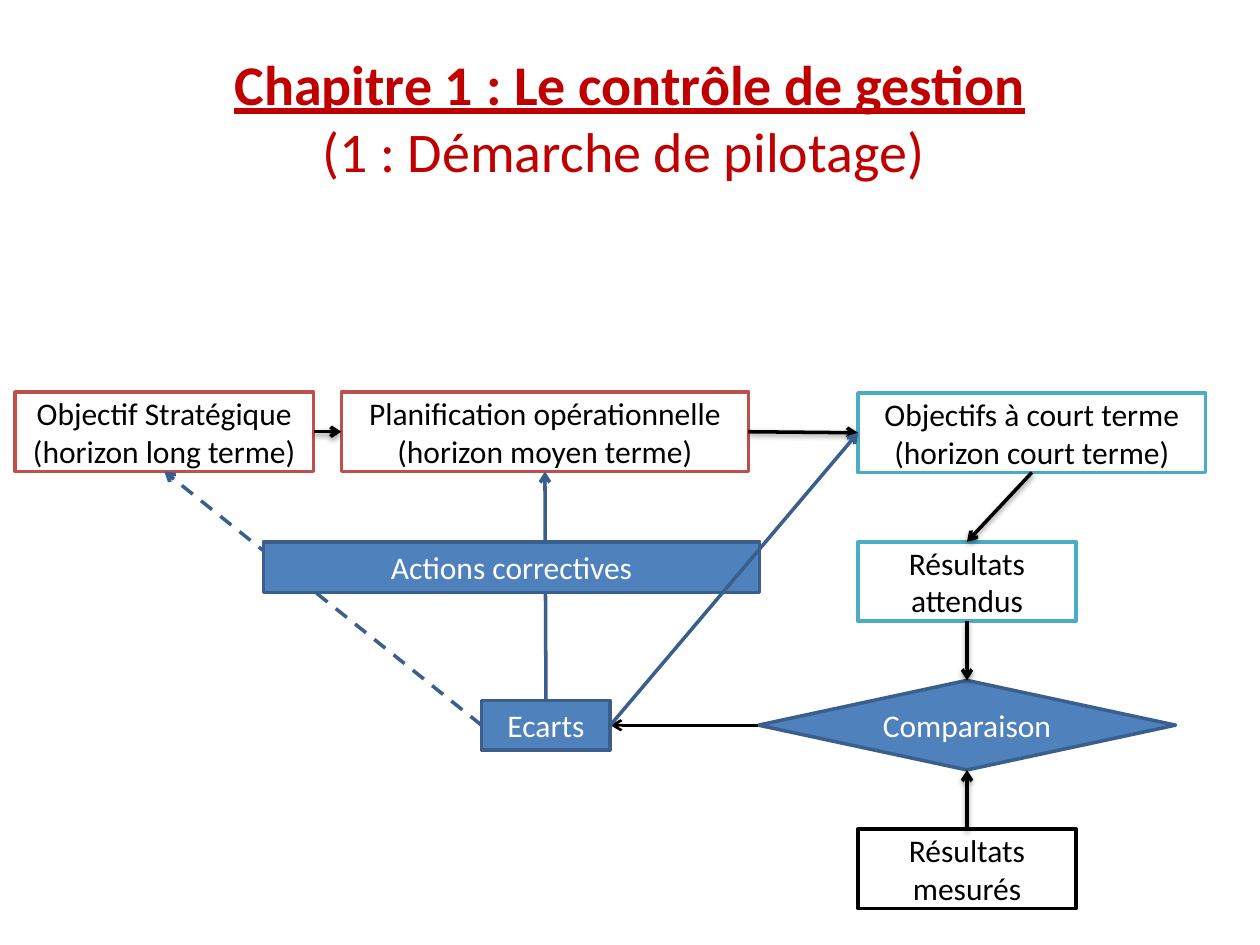
"""Build the slide on the steering process of management control."""
from lxml.etree import SubElement
from pptx import Presentation
from pptx.dml.color import RGBColor
from pptx.enum.dml import MSO_LINE
from pptx.enum.shapes import MSO_CONNECTOR, MSO_SHAPE
from pptx.enum.text import MSO_ANCHOR, MSO_AUTO_SIZE, PP_ALIGN
from pptx.oxml.ns import qn
from pptx.util import Pt

COLORS = {name: RGBColor.from_string(code) for name, code in {
    "title": "C00000", "white": "FFFFFF", "black": "000000", "red": "C0504D",
    "teal": "4BACC6", "blue": "4F81BD", "navy": "3A5F8C"}.items()}
TOP, BOTTOM = 0, 2
LEFT, RIGHT = 1, 3

deck = Presentation()
deck.slide_width, deck.slide_height = Pt(720), Pt(540)
page = deck.slides.add_slide(deck.slide_layouts[5])


def add_box(text, left, top, width, height, fill, line, kind=MSO_SHAPE.RECTANGLE):
    box = page.shapes.add_shape(kind, Pt(left), Pt(top), Pt(width), Pt(height))
    box.shadow.inherit = False
    box.fill.solid()
    box.fill.fore_color.rgb = COLORS[fill]
    box.line.color.rgb = COLORS[line]
    box.line.width = Pt(2)
    box.text_frame.text = text
    box.text_frame.word_wrap = True
    box.text_frame.vertical_anchor = MSO_ANCHOR.MIDDLE
    for para in box.text_frame.paragraphs:
        para.alignment = PP_ALIGN.CENTER
        para.font.name, para.font.size = "Calibri", Pt(18)
        para.font.color.rgb = COLORS["black" if fill == "white" else "white"]
    return box


def add_arrow(start, start_side, end, end_side, color="black", width=2, shadow=False, dash=None):
    arrow = page.shapes.add_connector(MSO_CONNECTOR.STRAIGHT, 0, 0, 0, 0)
    arrow.begin_connect(start, start_side)
    arrow.end_connect(end, end_side)
    arrow.line.color.rgb = COLORS[color]
    arrow.line.width = Pt(width)
    if dash:
        arrow.line.dash_style = dash
    SubElement(arrow.line._get_or_add_ln(), qn("a:tailEnd"), type="arrow")
    effects = SubElement(arrow._element.spPr, qn("a:effectLst"))
    if shadow:
        outer = SubElement(effects, qn("a:outerShdw"), blurRad=str(Pt(3.1)),
                           dist=str(Pt(1.6)), dir="5400000", rotWithShape="0")
        tint = SubElement(outer, qn("a:srgbClr"), val=str(COLORS["black"]))
        SubElement(tint, qn("a:alpha"), val="38000")


title = page.shapes.title
title.left, title.top, title.width, title.height = Pt(36), Pt(21.6), Pt(648), Pt(90)
title.text_frame.text = "Chapitre 1 : Le contrôle de gestion\n(1 : Démarche de pilotage) "
for para, strong in zip(title.text_frame.paragraphs, (True, False)):
    para.alignment = PP_ALIGN.CENTER
    para.font.name, para.font.size = "Calibri", Pt(32)
    para.font.bold = para.font.underline = strong
    para.font.color.rgb = COLORS["title"]

strategy = add_box("Objectif Stratégique\n(horizon long terme)",
                   8.6, 224, 170.6, 45.4, "white", "red")
planning = add_box("Planification opérationnelle\n(horizon moyen terme)",
                   195.1, 224, 232.6, 45.4, "white", "red")
short_term = add_box("Objectifs à court terme\n(horizon court terme)",
                     490.3, 224.6, 198.7, 45.4, "white", "teal")
expected = add_box("Résultats attendus", 490.3, 309.6, 124.6, 45.4, "white", "teal")
comparison = add_box("Comparaison", 433.4, 388.8, 238.4, 51.2, "blue", "navy",
                     MSO_SHAPE.FLOWCHART_DECISION)
measured = add_box("Résultats mesurés", 490.3, 473.8, 124.6, 45.4, "white", "black")
gaps = add_box("Ecarts", 275.2, 400.3, 73.6, 28.2, "blue", "navy")

for start, start_side, end, end_side in (
        (strategy, RIGHT, planning, LEFT),
        (planning, RIGHT, short_term, LEFT),
        (short_term, BOTTOM, expected, TOP),
        (expected, BOTTOM, comparison, TOP),
        (measured, TOP, comparison, BOTTOM)):
    add_arrow(start, start_side, end, end_side, shadow=True)
add_arrow(comparison, LEFT, gaps, RIGHT, width=1.5)
add_arrow(gaps, LEFT, strategy, BOTTOM, "navy", dash=MSO_LINE.DASH)
add_arrow(gaps, TOP, planning, BOTTOM, "navy")

actions = add_box("Actions correctives", 150.5, 309.6, 283.6, 29, "blue", "navy")
actions.text_frame.vertical_anchor = MSO_ANCHOR.TOP
actions.text_frame.auto_size = MSO_AUTO_SIZE.SHAPE_TO_FIT_TEXT
add_arrow(gaps, RIGHT, short_term, LEFT, "navy")

deck.save("out.pptx")
